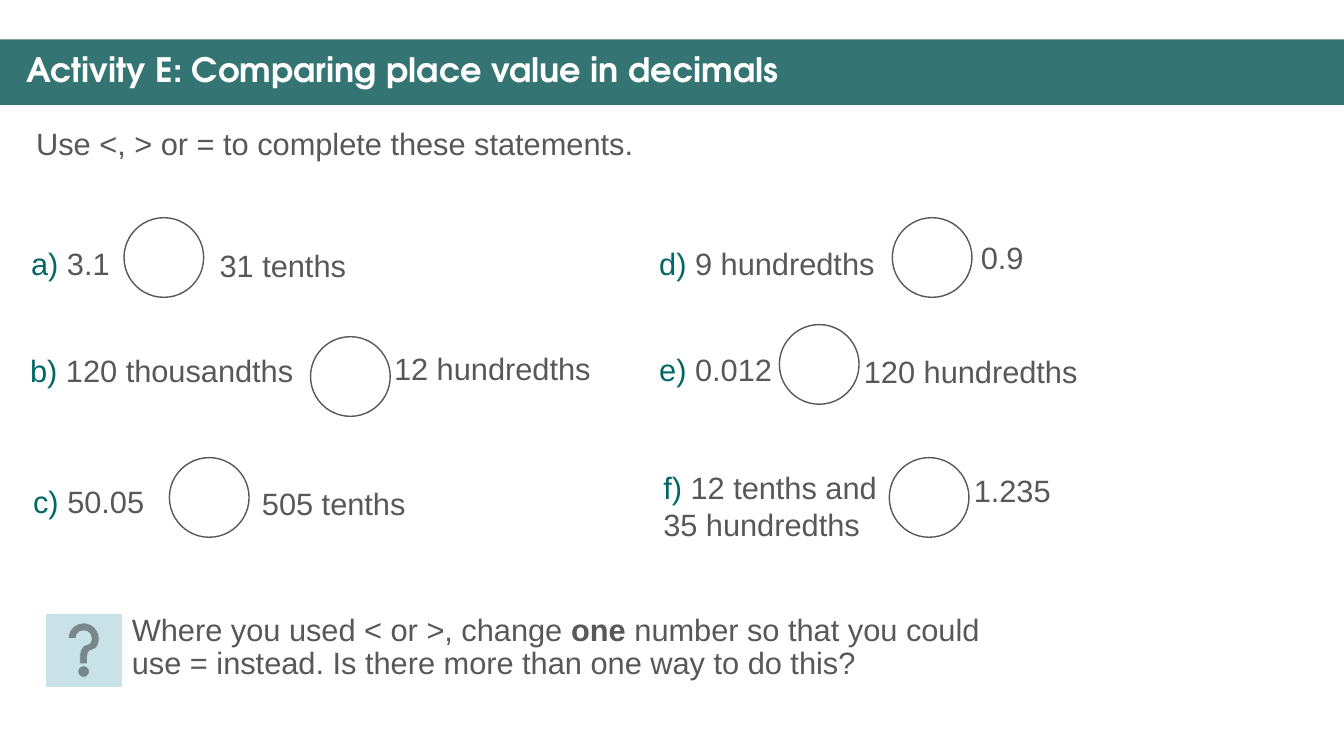
from pptx import Presentation
from pptx.dml.color import RGBColor
from pptx.enum.shapes import MSO_SHAPE
from pptx.enum.text import MSO_ANCHOR, MSO_AUTO_SIZE
from pptx.util import Inches, Pt

WIDE, HIGH = 13.33, 7.5
GREY, TEAL, BAND, PALE, WHITE = "585858", "006666", "347574", "C8E2E8", "FFFFFF"
SIDE, LINE = 0.79, 0.47

TITLE = "Activity E: Comparing place value in decimals"
TASK = "Use <, > or = to complete these statements."
ASK = [
    ("Where you used < or >, change ", GREY, False),
    ("one", GREY, True),
    (" number so that you could use = instead. Is there more than one way to do this?", GREY, False),
]
# label, left (x, y, width, text), circle (x, y), right (x, y, width, text)
ITEMS = [
    ("a) ", (0.21, 2.38, 0.99, "3.1"), (1.23, 2.16), (2.08, 2.4, 1.47, "31 tenths")),
    ("b) ", (0.2, 3.44, 2.85, "120 thousandths"), (3.08, 3.34), (3.81, 3.42, 2.18, "12 hundredths")),
    ("c) ", (0.23, 4.74, 1.32, "50.05"), (1.68, 4.54), (2.5, 4.76, 1.64, "505 tenths")),
    ("d) ", (6.44, 2.38, 2.37, "9 hundredths"), (8.85, 2.16), (9.63, 2.32, 0.63, "0.9")),
    ("e) ", (6.44, 3.43, 1.34, "0.012"), (7.73, 3.22), (8.47, 3.45, 2.44, "120 hundredths")),
    ("f) ", (6.48, 4.6, 2.49, "12 tenths and 35 hundredths"), (8.82, 4.54), (9.56, 4.63, 0.98, "1.235")),
]


def tint(code):
    return RGBColor.from_string(code)


def form(kind, x, y, w, h, fill=None, edge=None, thick=1):
    shape = slide.shapes.add_shape(kind, Inches(x), Inches(y), Inches(w), Inches(h))
    shape.shadow.inherit = False
    if fill:
        shape.fill.solid()
        shape.fill.fore_color.rgb = tint(fill)
    else:
        shape.fill.background()
    if edge:
        shape.line.color.rgb = tint(edge)
        shape.line.width = Pt(thick)
    else:
        shape.line.fill.background()


def write(x, y, w, h, parts, wrap=True, space=None, size=22, font="Arial"):
    frame = slide.shapes.add_textbox(Inches(x), Inches(y), Inches(w), Inches(h)).text_frame
    frame.word_wrap = wrap
    frame.auto_size = MSO_AUTO_SIZE.NONE if space else MSO_AUTO_SIZE.SHAPE_TO_FIT_TEXT
    para = frame.paragraphs[0]
    if space:
        para.line_spacing = space
    for text, color, bold in parts:
        run = para.add_run()
        run.text = text
        run.font.name = font
        run.font.size = Pt(size)
        run.font.bold = bold
        run.font.color.rgb = tint(color)
    return frame


deck = Presentation()
deck.slide_width, deck.slide_height = Inches(WIDE), Inches(HIGH)
slide = deck.slides.add_slide(deck.slide_layouts[6])

form(MSO_SHAPE.RECTANGLE, 0, 0.39, WIDE, 0.65, BAND)
head = write(0.16, 0.48, 13.04, LINE, [(TITLE, WHITE, True)], space=0.9, size=24, font="TeX Gyre Adventor")
head.vertical_anchor = MSO_ANCHOR.MIDDLE
write(0.26, 1.23, 12.81, LINE, [(TASK, GREY, False)], space=0.9)

for label, left, ring, right in ITEMS:
    form(MSO_SHAPE.OVAL, *ring, SIDE, SIDE, edge=GREY)
    x, y, w, text = left
    long = " and " in text
    write(x, y, w, 0.84 if long else LINE, [(label, TEAL, False), (text, GREY, False)], wrap=long)
    x, y, w, text = right
    write(x, y, w, LINE, [(text, GREY, False)], wrap=False)

form(MSO_SHAPE.ACTION_BUTTON_HELP, 0.46, 6.09, 0.74, 0.72, PALE, PALE, 0.5)
write(1.21, 6.05, 8.7, 0.97, ASK, space=0.9)

deck.save("out.pptx")
